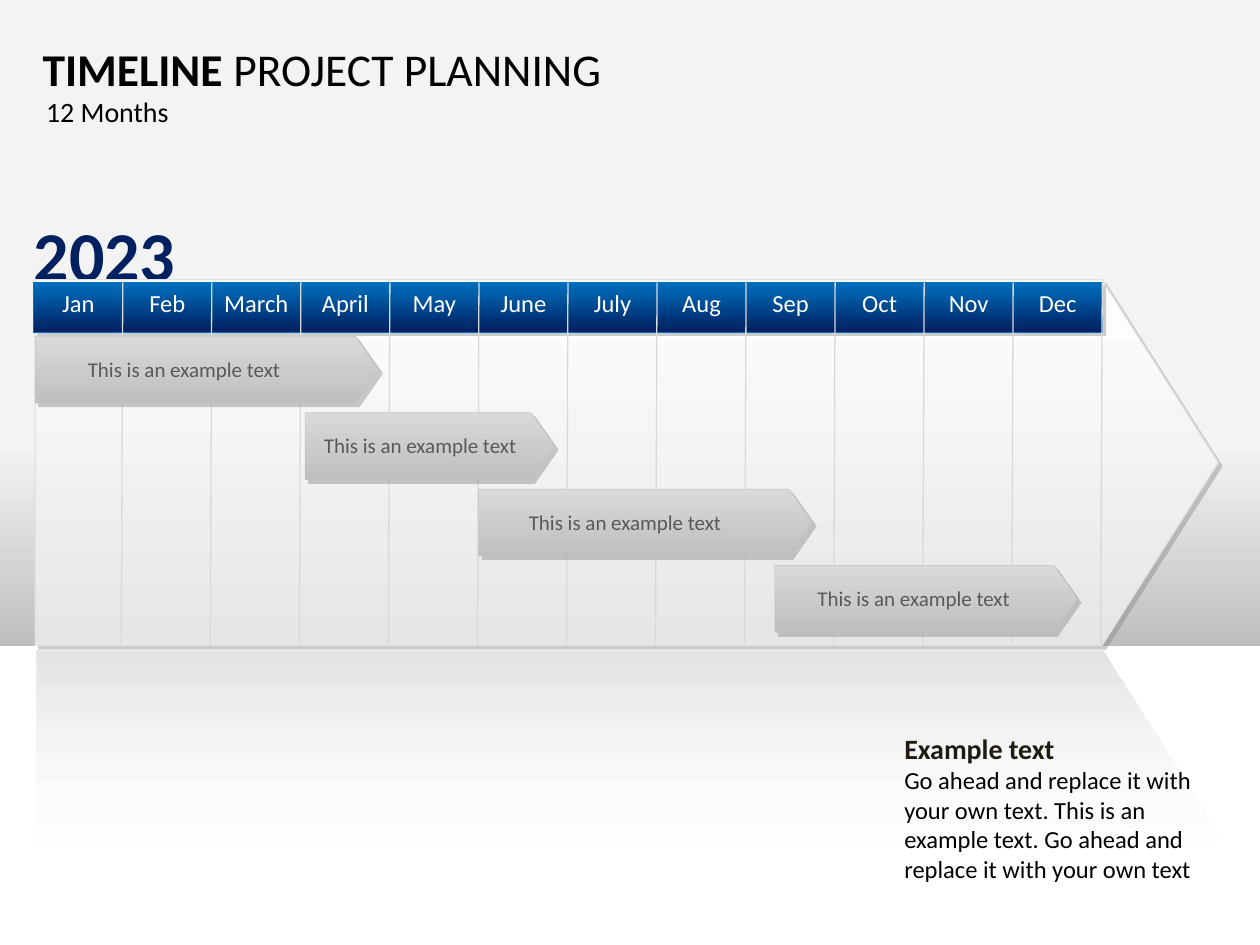
from collections import namedtuple

from lxml import etree
from pptx import Presentation
from pptx.dml.color import RGBColor
from pptx.enum.shapes import MSO_CONNECTOR, MSO_SHAPE
from pptx.enum.text import MSO_ANCHOR, MSO_AUTO_SIZE, PP_ALIGN
from pptx.oxml.ns import qn
from pptx.util import Cm, Pt

RECTANGLE = MSO_SHAPE.RECTANGLE
PLATE = MSO_SHAPE.PENTAGON
STRAIGHT = MSO_CONNECTOR.STRAIGHT
LEFT, CENTER = PP_ALIGN.LEFT, PP_ALIGN.CENTER
TOP, MIDDLE = MSO_ANCHOR.TOP, MSO_ANCHOR.MIDDLE
GROW, FIXED = MSO_AUTO_SIZE.SHAPE_TO_FIT_TEXT, MSO_AUTO_SIZE.NONE

FONT = "Calibri"
COLORS = {
    "black": "000000", "white": "FFFFFF", "navy": "002060", "blue": "0070C0",
    "backdrop": "F3F3F3", "silver": "BFBFBF", "light": "D9D9D9",
    "plate": "E6E6E6", "plate_edge": "E1E1E1", "shadow": "808080",
    "label": "595959", "heading": "1E1C11", "reflection": "020000",
}
MONTHS = ["Jan", "Feb", "March", "April", "May", "June",
          "July", "Aug", "Sep", "Oct", "Nov", "Dec"]
TASK_TEXT = "This is an example text"
TASKS = [(0.03, 6.93, 0.81), (5.47, 5.03, 0.13), (8.97, 6.73, 0.76), (14.94, 6.1, 0.61)]
TASK_HEIGHT, TASK_PITCH = 1.35, 1.54
PLATE_POINT, TASK_POINT = 0.318, 0.351

Box = namedtuple("Box", "left top width height")
Span = namedtuple("Span", "text size color bold", defaults=(False,))


def lengths(box):
    """Turn a box in centimetres into slide lengths."""
    return [Cm(value) for value in box]


def add_color(parent, color, alpha):
    """Append a colour with an opacity in percent."""
    node = etree.SubElement(parent, qn("a:srgbClr"), val=COLORS[color])
    if alpha < 100:
        etree.SubElement(node, qn("a:alpha"), val=str(alpha * 1000))


def add_block(page, kind, box, stops, edge=None, weight=0.75, point=None, shadow=True):
    """Draw a shape with a downward gradient of (position, colour, opacity) stops."""
    block = page.shapes.add_shape(kind, *lengths(box))
    if point is not None:
        block.adjustments[0] = point
    block.fill.gradient()
    block.fill.gradient_angle = 270
    properties = block._element.spPr
    stop_list = properties.find(".//" + qn("a:gsLst"))
    for old_stop in list(stop_list):
        stop_list.remove(old_stop)
    for position, color, alpha in stops:
        stop = etree.SubElement(stop_list, qn("a:gs"), pos=str(position * 1000))
        add_color(stop, color, alpha)
    if edge:
        block.line.color.rgb = RGBColor.from_string(COLORS[edge])
        block.line.width = Pt(weight)
    else:
        block.line.fill.background()
    block.shadow.inherit = False
    if shadow:
        effects = properties.find(qn("a:effectLst"))
        outer = etree.SubElement(effects, qn("a:outerShdw"), dist=str(Pt(3)),
                                 dir="2700000", algn="tl", rotWithShape="0")
        add_color(outer, "shadow", 40)


def add_text(page, box, paragraphs, align=LEFT, wrap=False, anchor=TOP, side=0.25, fit=GROW):
    """Write paragraphs, each a list of spans, into a text box."""
    frame = page.shapes.add_textbox(*lengths(box)).text_frame
    frame.word_wrap = wrap
    frame.auto_size = fit
    frame.vertical_anchor = anchor
    frame.margin_left = frame.margin_right = Cm(side)
    for index, spans in enumerate(paragraphs):
        para = frame.add_paragraph() if index else frame.paragraphs[0]
        para.alignment = align
        for span in spans:
            run = para.add_run()
            run.text = span.text
            run.font.name = FONT
            run.font.size = Pt(span.size)
            run.font.bold = span.bold
            run.font.color.rgb = RGBColor.from_string(COLORS[span.color])


def add_backdrop(page, box):
    """Shade the wall behind the timeline."""
    add_block(page, RECTANGLE, box,
              [(0, "backdrop", 100), (69, "backdrop", 100), (100, "silver", 100)], shadow=False)


def add_title(page, box):
    """Write the title and the period below it."""
    add_text(page, Box(box.left + 0.18, box.top, box.width - 0.18, 1.68),
             [[Span("TIMELINE ", 26, "black", True), Span("PROJECT PLANNING", 26, "black")]],
             wrap=True, anchor=MIDDLE, side=0, fit=FIXED)
    add_text(page, Box(box.left, box.top + 1.25, 3.15, 0.94), [[Span("12 Months", 16, "black")]])


def add_arrow(page, box):
    """Draw the year, the large arrow and its reflection."""
    add_block(page, PLATE, box._replace(left=box.left + 0.03, top=box.top + 7.47),
              [(0, "reflection", 11), (60, "white", 0)], point=PLATE_POINT, shadow=False)
    add_text(page, Box(box.left - 0.28, box.top - 1.5, 3.4, 1.96),
             [[Span("2023", 40, "navy", True)]])
    add_block(page, PLATE, box, [(0, "white", 100), (100, "plate", 100)],
              "plate_edge", point=PLATE_POINT)


def add_calendar(page, box):
    """Draw the month header and the dividers below it."""
    header = box._replace(height=1)
    add_block(page, RECTANGLE, header, [(0, "blue", 100), (100, "navy", 100)], "blue", 0.25)
    step = box.width / len(MONTHS)
    for index, month in enumerate(MONTHS):
        start = box.left + index * step
        end = start + step
        divider = page.shapes.add_connector(
            STRAIGHT, Cm(end), Cm(box.top), Cm(end - 0.03), Cm(box.top + box.height))
        divider.line.color.rgb = RGBColor.from_string(COLORS["light"])
        divider.line.width = Pt(0.75)
        etree.SubElement(divider._element.spPr, qn("a:effectLst"))
        add_text(page, Box(start, box.top, step, 0.86), [[Span(month, 14, "white")]], CENTER)


def add_tasks(page, box):
    """Draw the task bars, one row below the other."""
    for row, (offset, width, indent) in enumerate(TASKS):
        bar = Box(box.left + offset, box.top + row * TASK_PITCH, width, TASK_HEIGHT)
        add_block(page, PLATE, bar, [(0, "light", 100), (100, "silver", 100)],
                  "silver", 0.25, TASK_POINT)
        add_text(page, Box(bar.left + indent, bar.top + 0.28, 4.45, 0.76),
                 [[Span(TASK_TEXT, 12, "label")]])


def add_note(page, box):
    """Write the note below the arrow."""
    body = ("Go ahead and replace it with your own text. This is an example text. "
            "Go ahead and replace it with your own text")
    add_text(page, box, [[Span("Example text", 16, "heading", True)],
                         [Span(body, 14, "black")]], wrap=True)


def main():
    """Build the slide and save it."""
    deck = Presentation()
    deck.slide_width, deck.slide_height = Cm(25.4), Cm(19.05)
    page = deck.slides.add_slide(deck.slide_layouts[6])
    add_backdrop(page, Box(0, 0, 25.4, 13.03))
    add_arrow(page, Box(0.71, 5.64, 23.85, 7.37))
    add_calendar(page, Box(0.68, 5.69, 21.54, 7.31))
    add_tasks(page, Box(0.68, 6.78, 21.54, 5.97))
    add_title(page, Box(0.68, 0.53, 23.85, 2.19))
    add_note(page, Box(17.98, 14.63, 6.76, 4.11))
    deck.save("out.pptx")


if __name__ == "__main__":
    main()
